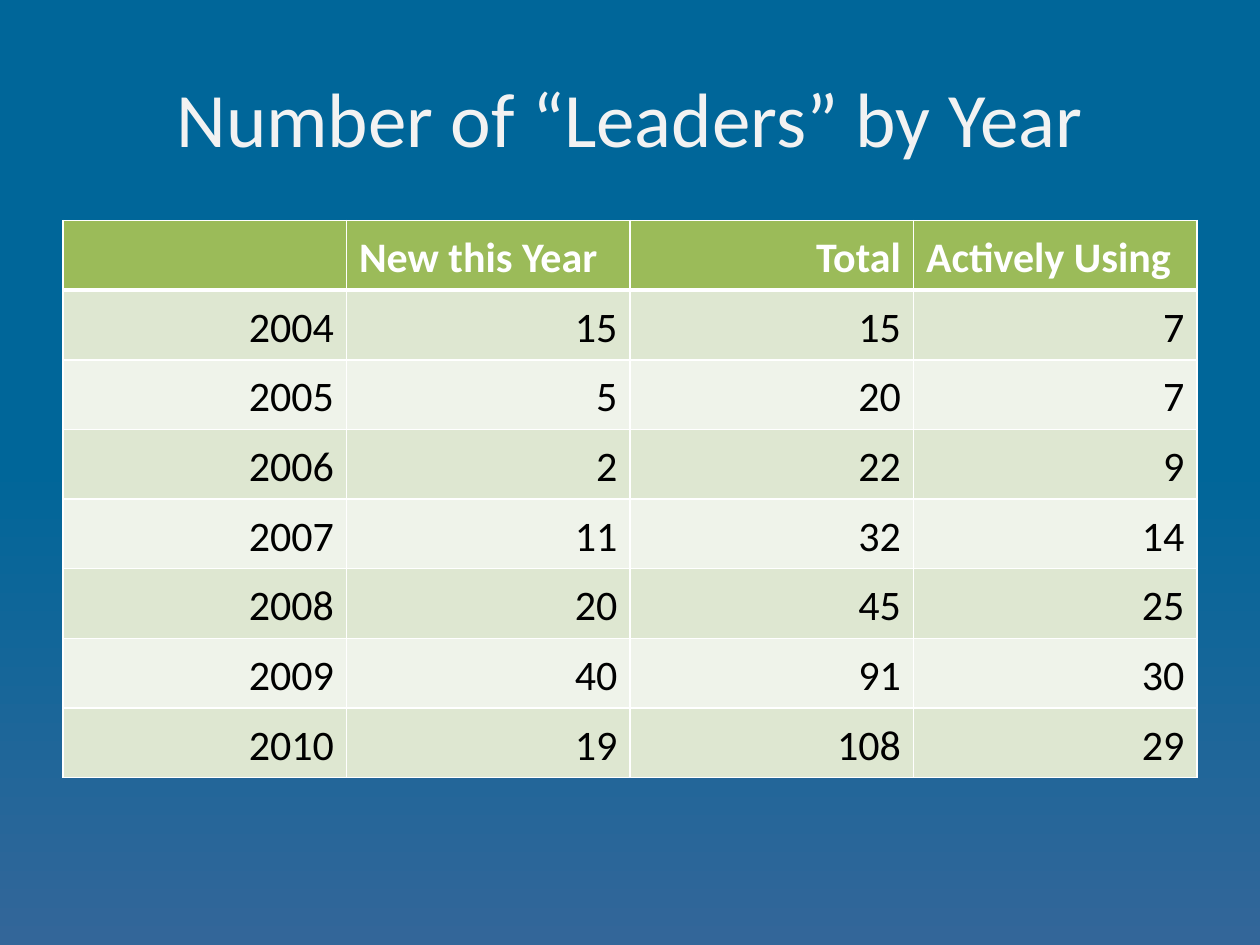
from dataclasses import dataclass

from lxml.etree import SubElement
from pptx import Presentation
from pptx.dml.color import RGBColor
from pptx.enum.text import MSO_ANCHOR, PP_ALIGN
from pptx.oxml.ns import qn
from pptx.util import Inches, Pt


@dataclass(frozen=True)
class Theme:
    """Colours, font and type sizes."""
    font: str = "Calibri"
    title_size: int = 44
    cell_size: int = 24
    sky: str = "006699"
    dusk: str = "336699"
    title: str = "F2F2F2"
    header: str = "9BBB59"
    bands: tuple = ("DEE7D1", "EFF3EA")
    line: str = "FFFFFF"
    header_text: str = "FFFFFF"
    body_text: str = "000000"


HEADER = ["", "New this Year", "Total", "Actively Using"]
LEADERS = [
    (2004, 15, 15, 7),
    (2005, 5, 20, 7),
    (2006, 2, 22, 9),
    (2007, 11, 32, 14),
    (2008, 20, 45, 25),
    (2009, 40, 91, 30),
    (2010, 19, 108, 29),
]
LEFT, RIGHT, CENTER = PP_ALIGN.LEFT, PP_ALIGN.RIGHT, PP_ALIGN.CENTER


class Deck:
    """Holds the theme and the current slide and draws each kind of element."""

    def __init__(self, theme, width=10, height=7.5):
        self.theme = theme
        self.prs = Presentation()
        self.prs.slide_width, self.prs.slide_height = Inches(width), Inches(height)
        self.s = self.prs.slides.add_slide(self.prs.slide_layouts[6])

    def box(self, x, y, w, h):
        """Turn shares of the slide's size into lengths."""
        sw, sh = self.prs.slide_width, self.prs.slide_height
        return round(x * sw), round(y * sh), round(w * sw), round(h * sh)

    def background(self, *stops):
        """Fill the slide from top to bottom with two (position, colour) stops."""
        fill = self.s.background.fill
        fill.gradient()
        fill.gradient_angle = 270
        for stop, (position, color) in zip(fill.gradient_stops, stops):
            stop.position = position
            stop.color.rgb = RGBColor.from_string(color)

    def add_text(self, tf, text, align, color, **style):
        """Add one formatted run."""
        p = tf.paragraphs[0]
        p.alignment = align
        r = p.add_run()
        r.text = text
        r.font.color.rgb = RGBColor.from_string(color)
        for name, value in {"name": self.theme.font, **style}.items():
            setattr(r.font, name, value)

    def title(self, text, *shares):
        """Add a centred title."""
        tf = self.s.shapes.add_textbox(*self.box(*shares)).text_frame
        tf.word_wrap = True
        tf.vertical_anchor = MSO_ANCHOR.MIDDLE
        self.add_text(tf, text, CENTER, self.theme.title, size=Pt(self.theme.title_size))

    def border(self, cell, **widths):
        """Draw cell borders, given in points by side."""
        tc_pr = cell._tc.get_or_add_tcPr()
        for side, width in widths.items():
            ln = SubElement(tc_pr, qn(f"a:ln{side}"), w=str(Pt(width)))
            SubElement(SubElement(ln, qn("a:solidFill")), qn("a:srgbClr"), val=self.theme.line)

    def cell(self, cell, value, row, align):
        """Style and fill one cell by its row."""
        t = self.theme
        head = row == 0
        self.border(cell, L=1, R=1, T=3 if row == 1 else 1, B=3 if head else 1)
        cell.fill.solid()
        fill = t.header if head else t.bands[(row - 1) % len(t.bands)]
        cell.fill.fore_color.rgb = RGBColor.from_string(fill)
        cell.vertical_anchor = MSO_ANCHOR.BOTTOM
        if value != "":
            color = t.header_text if head else t.body_text
            self.add_text(cell.text_frame, str(value), align, color, size=Pt(t.cell_size), bold=head)

    def table(self, rows, header_aligns, *shares):
        """Add a banded table with equal columns and rows."""
        frame = self.s.shapes.add_table(len(rows), len(rows[0]), *self.box(*shares))
        for i, row in enumerate(rows):
            for j, value in enumerate(row):
                align = RIGHT if i else header_aligns[j]
                self.cell(frame.table.cell(i, j), value, i, align)


def main():
    """Build the slide and save it."""
    theme = Theme()
    deck = Deck(theme)
    deck.background((0.49, theme.sky), (1, theme.dusk))
    deck.title("Number of “Leaders” by Year", 0.05, 0.04, 0.9, 1 / 6)
    deck.table([HEADER, *LEADERS], (LEFT, LEFT, RIGHT, LEFT), 0.05, 7 / 30, 0.9, 0.59)
    deck.prs.save("out.pptx")


if __name__ == "__main__":
    main()
